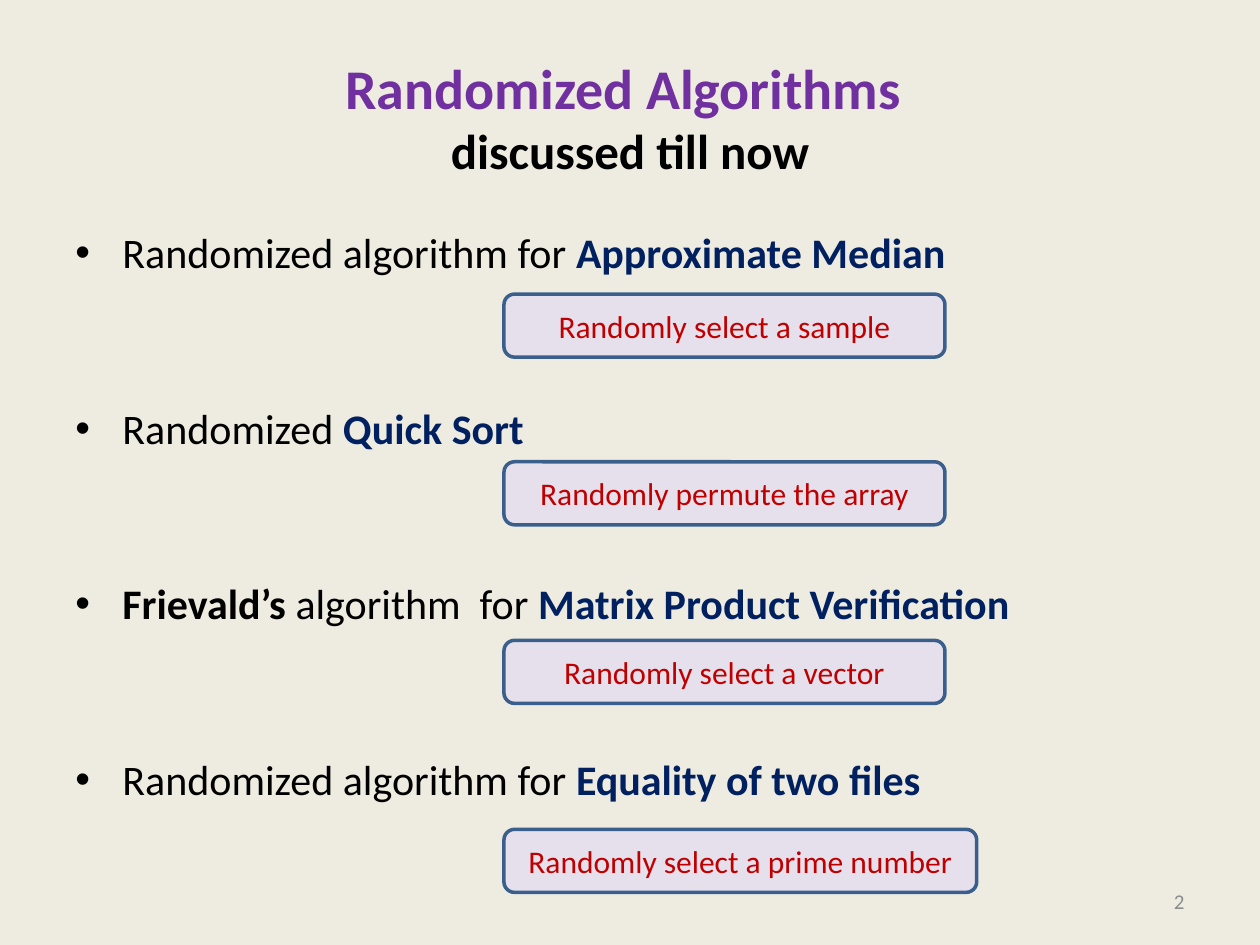
from dataclasses import dataclass

from lxml import etree
from pptx import Presentation
from pptx.dml import color
from pptx.enum import shapes, text
from pptx.oxml import ns
from pptx.util import Cm, Pt

FONT = "Calibri"
BLACK, NAVY, PURPLE, RED, GRAY = "000000", "002060", "7030A0", "C00000", "8C8C8C"
BACKGROUND, LILAC, BLUE = "EEECE1", "E6E0EC", "3A5F8C"
CENTER, RIGHT = text.PP_ALIGN.CENTER, text.PP_ALIGN.RIGHT
MIDDLE = text.MSO_ANCHOR.MIDDLE
BULLET_INDENT = Cm(0.95)
BULLET_GAP = Pt(71.5)


@dataclass
class Run:
    text: str
    color: str = BLACK
    bold: bool = False


@dataclass
class Algorithm:
    runs: list[Run]
    idea: str
    top: float
    width: float = 8.89


ALGORITHMS = [
    Algorithm([Run("Randomized algorithm for "), Run("Approximate Median", NAVY, True)],
              "Randomly select a sample", 5.93),
    Algorithm([Run("Randomized "), Run("Quick Sort", NAVY, True)],
              "Randomly permute the array", 9.31),
    Algorithm([Run("Frievald’s", bold=True), Run(" algorithm  for "),
               Run("Matrix Product Verification", NAVY, True)],
              "Randomly select a vector", 12.91),
    Algorithm([Run("Randomized algorithm for "), Run("Equality of two files", NAVY, True)],
              "Randomly select a prime number", 16.72, 9.53),
]


def rgb(value: str) -> color.RGBColor:
    return color.RGBColor.from_string(value)


def add_run(p, content: str, *, size: float, fill: str = BLACK, bold: bool = False) -> None:
    r = p.add_run()
    r.text = content
    r.font.name = FONT
    r.font.size = Pt(size)
    r.font.bold = bold
    r.font.color.rgb = rgb(fill)


def set_bullet(p) -> None:
    pPr = p._p.get_or_add_pPr()
    pPr.set("marL", str(BULLET_INDENT))
    pPr.set("indent", str(-BULLET_INDENT))
    etree.SubElement(pPr, ns.qn("a:buFont")).set("typeface", "Arial")
    etree.SubElement(pPr, ns.qn("a:buChar")).set("char", "•")


def add_title(s) -> None:
    sp = s.shapes.title
    sp.left, sp.top, sp.width, sp.height = Cm(1.27), Cm(0.76), Cm(22.86), Cm(3.18)
    tf = sp.text_frame
    tf.auto_size = text.MSO_AUTO_SIZE.NONE
    tf.vertical_anchor = MIDDLE
    p = tf.paragraphs[0]
    p.alignment = CENTER
    add_run(p, "Randomized Algorithms ", size=32, fill=PURPLE, bold=True)
    p.add_line_break()
    add_run(p, "discussed till now", size=28, bold=True)


def add_bullets(s, algorithms: list[Algorithm]) -> None:
    tf = s.shapes.add_textbox(Cm(1.27), Cm(4.45), Cm(22.86), Cm(12.57)).text_frame
    tf.word_wrap = True
    for i, algorithm in enumerate(algorithms):
        p = tf.add_paragraph() if i else tf.paragraphs[0]
        p.space_before = BULLET_GAP if i else Pt(0)
        set_bullet(p)
        for run in algorithm.runs:
            add_run(p, run.text, size=24, fill=run.color, bold=run.bold)


def add_idea(s, algorithm: Algorithm) -> None:
    sp = s.shapes.add_shape(shapes.MSO_SHAPE.ROUNDED_RECTANGLE, Cm(10.16),
                            Cm(algorithm.top), Cm(algorithm.width), Cm(1.27))
    sp.shadow.inherit = False
    sp.fill.solid()
    sp.fill.fore_color.rgb = rgb(LILAC)
    sp.line.color.rgb = rgb(BLUE)
    sp.line.width = Pt(2)
    tf = sp.text_frame
    tf.word_wrap = True
    tf.vertical_anchor = MIDDLE
    p = tf.paragraphs[0]
    p.alignment = CENTER
    add_run(p, algorithm.idea, size=18, fill=RED)


def add_page_number(s, number: str) -> None:
    tf = s.shapes.add_textbox(Cm(18.2), Cm(17.65), Cm(5.93), Cm(1.02)).text_frame
    tf.word_wrap = True
    tf.vertical_anchor = MIDDLE
    p = tf.paragraphs[0]
    p.alignment = RIGHT
    add_run(p, number, size=12, fill=GRAY)


def main() -> None:
    prs = Presentation()
    prs.slide_width, prs.slide_height = Cm(25.4), Cm(19.05)
    s = prs.slides.add_slide(prs.slide_layouts.get_by_name("Title Only"))
    s.background.fill.solid()
    s.background.fill.fore_color.rgb = rgb(BACKGROUND)
    add_title(s)
    add_bullets(s, ALGORITHMS)
    add_page_number(s, "2")
    for algorithm in ALGORITHMS:
        add_idea(s, algorithm)
    prs.save("out.pptx")


if __name__ == "__main__":
    main()
